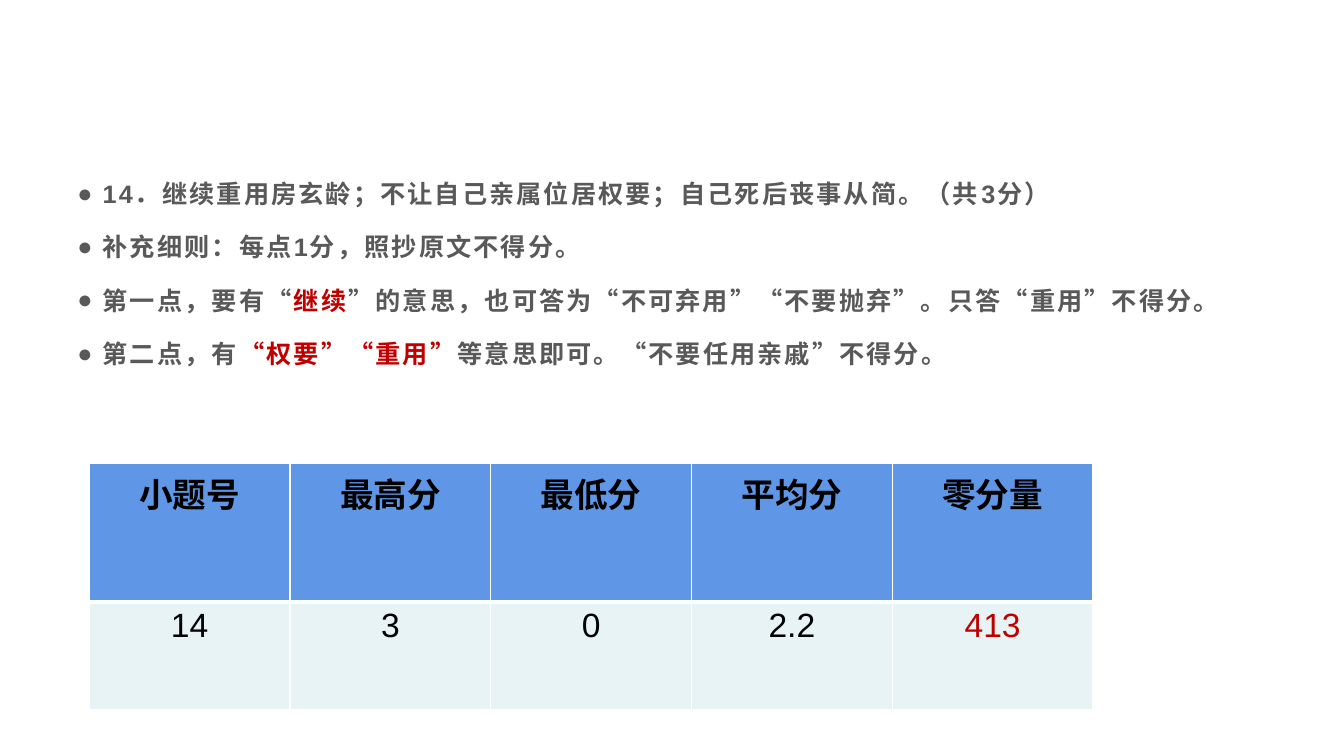
from lxml import etree
from pptx import Presentation
from pptx import util as u
from pptx.dml.color import RGBColor
from pptx.enum import lang, text
from pptx.oxml import ns

GRAY = RGBColor(0x59, 0x59, 0x59)
RED = RGBColor(0xC0, 0x00, 0x00)
BLACK = RGBColor(0x00, 0x00, 0x00)
WHITE = RGBColor(0xFF, 0xFF, 0xFF)
HEADER_BLUE = RGBColor(0x60, 0x96, 0xE6)
BODY_TINT = RGBColor(0xE7, 0xF3, 0xF4)

ANSWER_RULES = [
    [("14．继续重用房玄龄；不让自己亲属位居权要；自己死后丧事从简。（共3分）", GRAY)],
    [("补充细则：每点1分，照抄原文不得分。", GRAY)],
    [("第一点，要有“", GRAY), ("继续", RED),
     ("”的意思，也可答为“不可弃用”“不要抛弃”。只答“重用”不得分。", GRAY)],
    [("第二点，有", GRAY), ("“权要”“重用”", RED),
     ("等意思即可。“不要任用亲戚”不得分。", GRAY)],
]
SCORE_HEADERS = ["小题号", "最高分", "最低分", "平均分", "零分量"]
SCORES = ["14", "3", "0", "2.2", "413"]


class SlideBuilder:
    """Hold the style and the current slide, and add its elements."""

    font_name = "Arial"

    def __init__(self, slide):
        self.slide = slide

    def add_run(self, paragraph, words, size, color, bold):
        run = paragraph.add_run()
        run.text = words
        run.font.name = self.font_name
        run.font.size = u.Pt(size)
        run.font.bold = bold
        run.font.color.rgb = color
        run.font.language_id = lang.MSO_LANGUAGE_ID.SIMPLIFIED_CHINESE
        return run

    def add_bullet(self, paragraph):
        properties = paragraph._p.get_or_add_pPr()
        indent = u.Cm(0.64)
        properties.set("marL", str(indent))
        properties.set("indent", str(-indent))
        etree.SubElement(properties, ns.qn("a:buFont"), typeface=self.font_name)
        etree.SubElement(properties, ns.qn("a:buChar"), char="●")

    def add_bullet_list(self, left, top, width, height, items):
        shape = self.slide.shapes.add_textbox(left, top, width, height)
        frame = shape.text_frame
        frame.word_wrap = True
        for index, item in enumerate(items):
            paragraph = frame.add_paragraph() if index else frame.paragraphs[0]
            paragraph.line_spacing = 1.3
            paragraph.space_after = u.Pt(10)
            self.add_bullet(paragraph)
            for words, color in item:
                run = self.add_run(paragraph, words, 18, color, True)
                run._r.get_or_add_rPr().set("spc", "150")

    def add_borders(self, cell, widths):
        properties = cell._tc.get_or_add_tcPr()
        for side, width in zip("LRTB", widths):
            line = etree.SubElement(properties, ns.qn(f"a:ln{side}"), w=str(u.Pt(width)))
            fill = etree.SubElement(line, ns.qn("a:solidFill"))
            etree.SubElement(fill, ns.qn("a:srgbClr"), val=str(WHITE))

    def fill_cell(self, cell, words, color, bold, fill, borders):
        self.add_borders(cell, borders)
        cell.fill.solid()
        cell.fill.fore_color.rgb = fill
        cell.margin_left = cell.margin_right = u.Cm(0.32)
        paragraph = cell.text_frame.paragraphs[0]
        paragraph.alignment = text.PP_ALIGN.CENTER
        self.add_run(paragraph, words, 24, color, bold)

    def add_score_table(self, left, top, column_width, row_heights, headers, scores):
        frame = self.slide.shapes.add_table(
            2, len(headers), left, top, column_width * len(headers), sum(row_heights))
        table = frame.table
        for row, height in zip(table.rows, row_heights):
            row.height = height
        for index, (header, score) in enumerate(zip(headers, scores)):
            table.columns[index].width = column_width
            score_color = RED if index == len(scores) - 1 else BLACK
            self.fill_cell(table.cell(0, index), header, BLACK, True, HEADER_BLUE, (1, 1, 1, 3))
            self.fill_cell(table.cell(1, index), score, score_color, False, BODY_TINT, (1, 1, 3, 1))


def main():
    presentation = Presentation()
    presentation.slide_width = u.Cm(33.87)
    presentation.slide_height = u.Cm(19.05)
    builder = SlideBuilder(presentation.slides.add_slide(presentation.slide_layouts[6]))
    builder.add_bullet_list(u.Cm(1.7), u.Cm(4.14), u.Cm(30.48), u.Cm(13.2), ANSWER_RULES)
    builder.add_score_table(u.Cm(2.25), u.Cm(11.67), u.Cm(5.06),
                            [u.Cm(3.5), u.Cm(2.7)], SCORE_HEADERS, SCORES)
    presentation.save("out.pptx")


if __name__ == "__main__":
    main()
